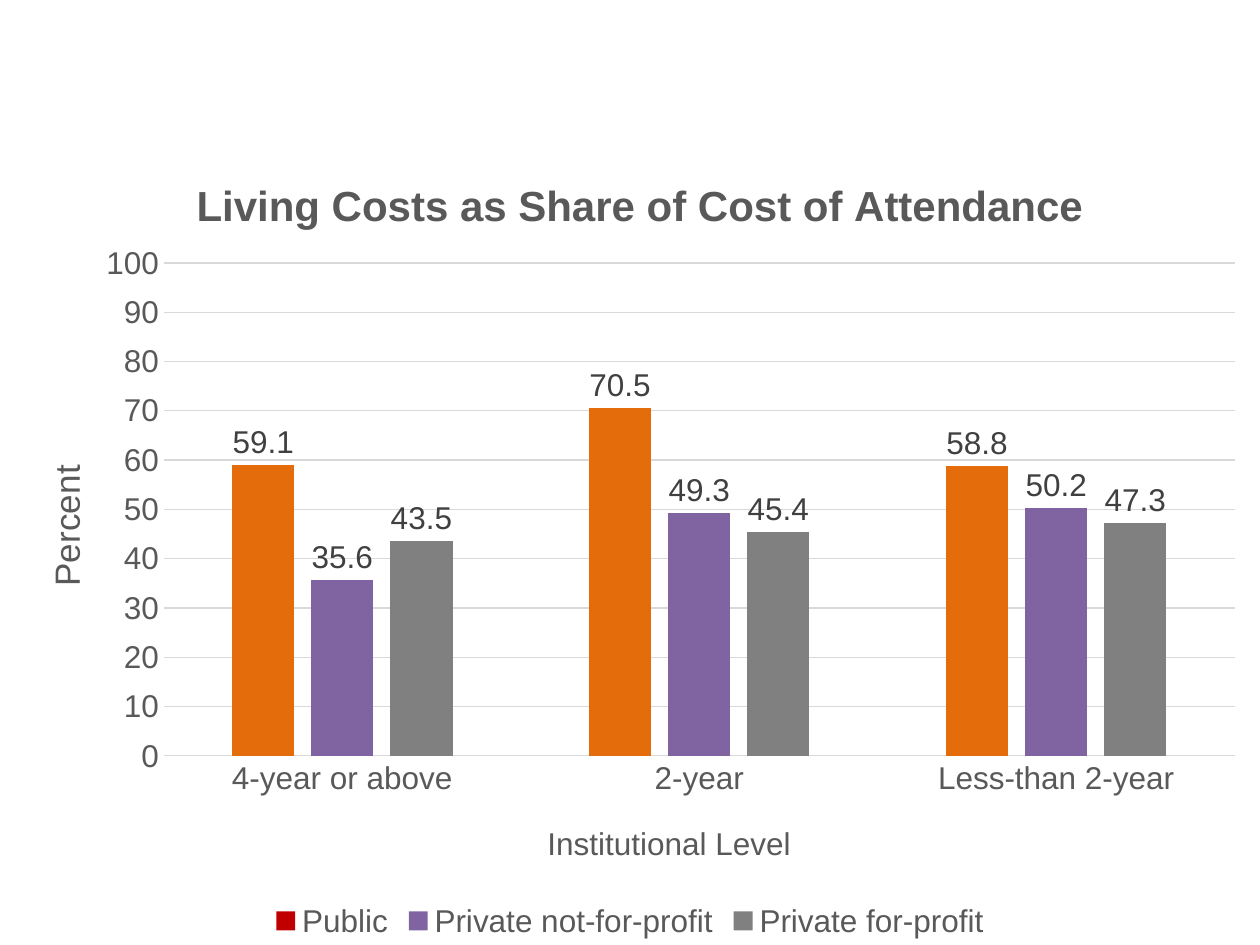
from dataclasses import dataclass
from typing import Optional

from lxml.etree import SubElement
from pptx import Presentation
from pptx.chart.data import CategoryChartData
from pptx.dml.color import RGBColor
from pptx.enum.chart import (XL_CHART_TYPE, XL_LABEL_POSITION,
                             XL_LEGEND_POSITION, XL_TICK_MARK)
from pptx.oxml.ns import qn
from pptx.util import Cm, Pt


@dataclass(frozen=True)
class Theme:
    font: str = "Arial"
    base: str = "000000"
    text: str = "595959"
    label: str = "404040"
    line: str = "D9D9D9"
    base_size: int = 16
    text_size: int = 18
    percent_size: int = 20
    title_size: int = 24
    line_width: float = 0.75


@dataclass(frozen=True)
class Sector:
    name: str
    shares: tuple[float, ...]
    color: str
    bar_color: Optional[str] = None


THEME = Theme()
LEVELS = ("4-year or above", "2-year", "Less-than 2-year")
SECTORS = (
    Sector("Public", (59.1, 70.5, 58.8), "C00000", "E46C0A"),
    Sector("Private not-for-profit", (35.6, 49.3, 50.2), "8064A2"),
    Sector("Private for-profit", (43.5, 45.4, 47.3), "808080"),
)


def style_font(font, size: int, color: str, bold: bool = False) -> None:
    font.name = THEME.font
    font.size = Pt(size)
    font.bold = bold
    font.color.rgb = RGBColor.from_string(color)


def fill_solid(fill, color: str) -> None:
    fill.solid()
    fill.fore_color.rgb = RGBColor.from_string(color)


def style_line(line) -> None:
    line.color.rgb = RGBColor.from_string(THEME.line)
    line.width = Pt(THEME.line_width)


def place(element, inner: bool = False, **fractions: float) -> None:
    """Position a chart part by fractions of the chart's size."""
    layout = element.find(qn("c:layout"))
    if layout is None:
        layout = element.makeelement(qn("c:layout"))
        element.insert(0 if element.find(qn("c:tx")) is None else 1, layout)
    for child in list(layout):
        layout.remove(child)
    manual = SubElement(layout, qn("c:manualLayout"))
    if inner:
        SubElement(manual, qn("c:layoutTarget")).set("val", "inner")
    for side in ("x", "y"):
        SubElement(manual, qn(f"c:{side}Mode")).set("val", "edge")
    for key, value in fractions.items():
        SubElement(manual, qn(f"c:{key}")).set("val", str(value))


def add_title(owner, text: str, size: int, x: float, y: float,
              bold: bool = False) -> None:
    """Give a chart or an axis its title."""
    owner.has_title = True
    title = owner.chart_title if hasattr(owner, "chart_title") else owner.axis_title
    span = title.text_frame.paragraphs[0].add_run()
    span.text = text
    style_font(span.font, size, THEME.text, bold)
    place(title._element, x=x, y=y)


def style_axis(axis) -> None:
    axis.major_tick_mark = XL_TICK_MARK.NONE
    axis.minor_tick_mark = XL_TICK_MARK.NONE
    style_font(axis.tick_labels.font, THEME.text_size, THEME.text)


def style_series(series, sector: Sector) -> None:
    fill_solid(series.format.fill, sector.color)
    series.invert_if_negative = False
    if sector.bar_color:
        for index in range(len(sector.shares)):
            fill_solid(series.points[index].format.fill, sector.bar_color)
    labels = series.data_labels
    labels.show_value = True
    labels.position = XL_LABEL_POSITION.OUTSIDE_END
    style_font(labels.font, THEME.text_size, THEME.label)


def add_cost_chart(page) -> None:
    data = CategoryChartData(number_format="0.0")
    data.categories = LEVELS
    for sector in SECTORS:
        data.add_series(sector.name, sector.shares)
    chart = page.shapes.add_chart(XL_CHART_TYPE.COLUMN_CLUSTERED, Cm(0), Cm(2.97),
                                  Cm(25.4), Cm(16.08), data).chart
    style_font(chart.font, THEME.base_size, THEME.base)
    add_title(chart, "Living Costs as Share of Cost of Attendance",
              THEME.title_size, x=0.15, y=0.03, bold=True)

    # Bars
    plot = chart.plots[0]
    plot.vary_by_categories = False
    plot.gap_width = 219
    plot.overlap = -27
    for series, sector in zip(plot.series, SECTORS):
        style_series(series, sector)
    place(chart._chartSpace.chart.plotArea, inner=True,
          x=0.13, y=0.145, w=0.85, h=0.618)

    # Axes
    levels, percent = chart.category_axis, chart.value_axis
    for axis in (levels, percent):
        style_axis(axis)
    style_line(levels.format.line)
    add_title(levels, "Institutional Level", THEME.text_size, x=0.43, y=0.84)
    percent.minimum_scale, percent.maximum_scale = 0, 100
    percent.major_unit = 10
    percent.tick_labels.number_format = "0"
    percent.tick_labels.number_format_is_linked = False
    percent.format.line.fill.background()
    percent.has_major_gridlines = True
    style_line(percent.major_gridlines.format.line)
    add_title(percent, "Percent", THEME.percent_size, x=0.03, y=0.39)

    # Legend
    chart.has_legend = True
    chart.legend.position = XL_LEGEND_POSITION.BOTTOM
    chart.legend.include_in_layout = False
    style_font(chart.legend.font, THEME.text_size, THEME.text)


def main() -> None:
    deck = Presentation()
    deck.slide_width, deck.slide_height = Cm(25.4), Cm(19.05)
    page = deck.slides.add_slide(deck.slide_layouts[6])
    add_cost_chart(page)
    deck.save("out.pptx")


if __name__ == "__main__":
    main()
